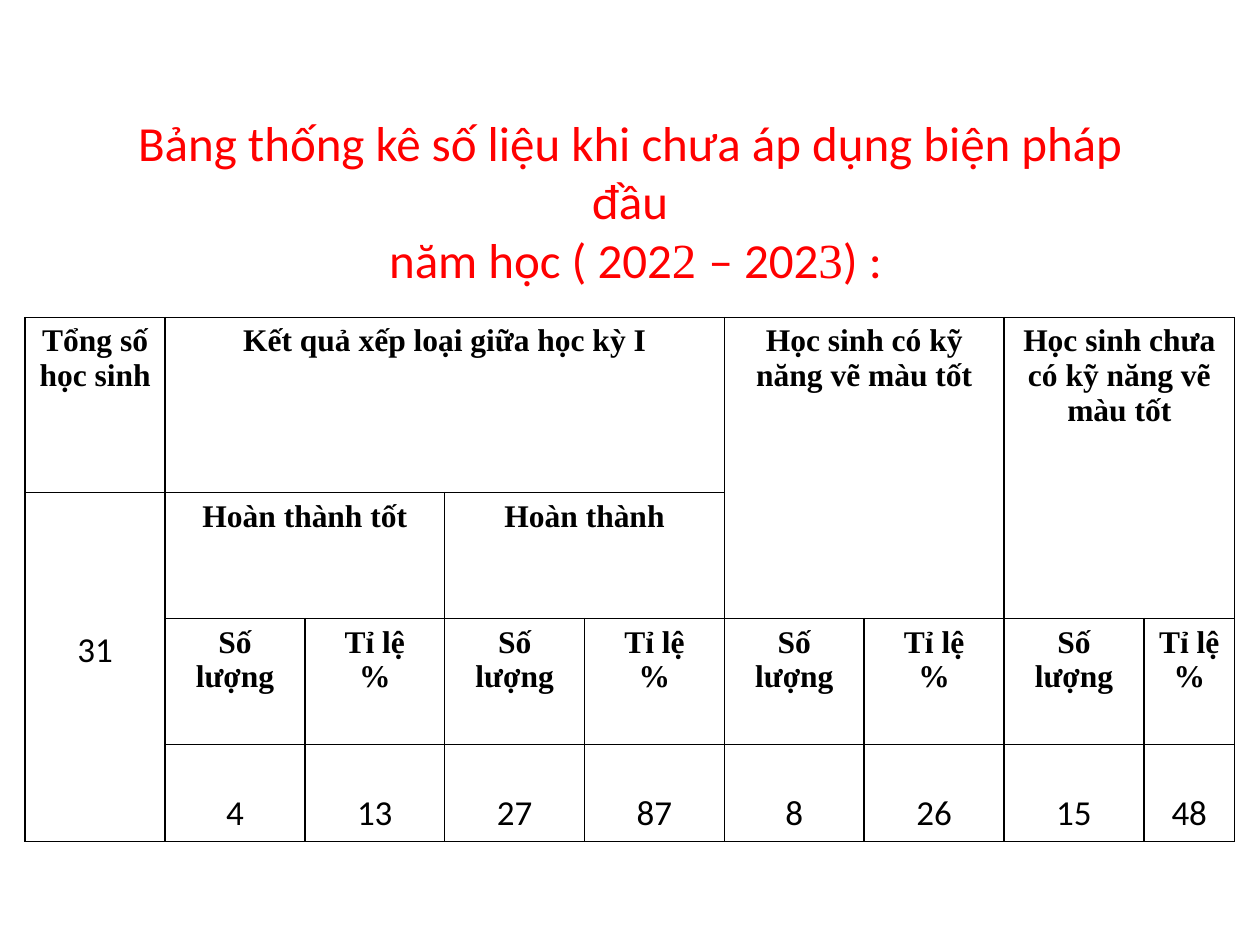
"""Build a slide with a table of pupils' drawing results."""
from lxml import etree
from pptx import Presentation
from pptx.dml.color import RGBColor
from pptx.enum import text as t
from pptx.oxml import ns
from pptx.util import Inches, Pt

RED = RGBColor(255, 0, 0)
BLACK = RGBColor(0, 0, 0)
WHITE = RGBColor(255, 255, 255)
SANS, SERIF = "Calibri", "Times New Roman"
WIDTHS = [1.11] * 8 + [0.72]
HEIGHTS = [1.39, 1, 1, 0.77]
TITLE = [
    [("Bảng thống kê số liệu khi chưa áp dụng biện pháp đầu", SANS)],
    [(" năm học ( 202", SANS), ("2 ", SERIF), ("– 202", SANS),
     ("3", SERIF), (") :", SANS)],
]
HEADS = [
    (0, 0, 1, 1, "Tổng số học sinh"),
    (0, 1, 1, 4, "Kết quả xếp loại giữa học kỳ I"),
    (0, 5, 2, 2, "Học sinh có kỹ năng vẽ màu tốt"),
    (0, 7, 2, 2, "Học sinh chưa có kỹ năng vẽ màu tốt"),
    (1, 1, 1, 2, "Hoàn thành tốt"),
    (1, 3, 1, 2, "Hoàn thành"),
]
VALUES = [4, 13, 27, 87, 8, 26, 15, 48]


def style(run, font, size, color, bold=False):
    run.font.name = font
    run.font.size = Pt(size)
    run.font.bold = bold
    run.font.color.rgb = color


def add_title(slide):
    box = slide.shapes.add_textbox(
        Inches(0.67), Inches(0.84), Inches(8.66), Inches(1.5))
    frame = box.text_frame
    frame.word_wrap = True
    frame.auto_size = t.MSO_AUTO_SIZE.SHAPE_TO_FIT_TEXT
    for i, parts in enumerate(TITLE):
        para = frame.add_paragraph() if i else frame.paragraphs[0]
        para.alignment = t.PP_ALIGN.CENTER
        for words, font in parts:
            run = para.add_run()
            run.text = words
            style(run, font, 28, RED)


def add_edges(cell):
    props = cell._tc.get_or_add_tcPr()
    for i, side in enumerate(("lnL", "lnR", "lnT", "lnB")):
        line = etree.Element(ns.qn("a:" + side), w=str(Pt(1)))
        fill = etree.SubElement(line, ns.qn("a:solidFill"))
        etree.SubElement(fill, ns.qn("a:srgbClr"), val=str(BLACK))
        props.insert(i, line)


def fill_cell(cell, words, font=SERIF, size=18, bold=True):
    cell.text_frame.text = words
    for para in cell.text_frame.paragraphs:
        para.alignment = t.PP_ALIGN.CENTER
        for run in para.runs:
            style(run, font, size, BLACK, bold)


def add_grid(slide):
    grid = slide.shapes.add_table(
        len(HEIGHTS), len(WIDTHS), Inches(0.2), Inches(2.52),
        Inches(sum(WIDTHS)), Inches(sum(HEIGHTS))).table
    for col, width in zip(grid.columns, WIDTHS):
        col.width = Inches(width)
    for row, height in zip(grid.rows, HEIGHTS):
        row.height = Inches(height)
    for cell in grid.iter_cells():
        cell.fill.solid()
        cell.fill.fore_color.rgb = WHITE
        add_edges(cell)
    return grid


def span(grid, row, col, rows, cols):
    cell = grid.cell(row, col)
    if rows * cols > 1:
        cell.merge(grid.cell(row + rows - 1, col + cols - 1))
    return cell


def fill_grid(grid):
    for *area, words in HEADS:
        fill_cell(span(grid, *area), words)
    total = span(grid, 1, 0, 3, 1)
    fill_cell(total, "31", SANS, 20, False)
    total.vertical_anchor = t.MSO_ANCHOR.MIDDLE
    total.margin_bottom = Inches(0.31)
    for col, value in enumerate(VALUES, 1):
        fill_cell(grid.cell(2, col), "Số lượng" if col % 2 else "Tỉ lệ\n%")
        cell = grid.cell(3, col)
        fill_cell(cell, str(value), SANS, 20, False)
        cell.vertical_anchor = t.MSO_ANCHOR.BOTTOM


def main():
    deck = Presentation()
    deck.slide_width, deck.slide_height = Inches(10), Inches(7.5)
    slide = deck.slides.add_slide(deck.slide_layouts[6])
    add_title(slide)
    fill_grid(add_grid(slide))
    deck.save("out.pptx")


if __name__ == "__main__":
    main()
